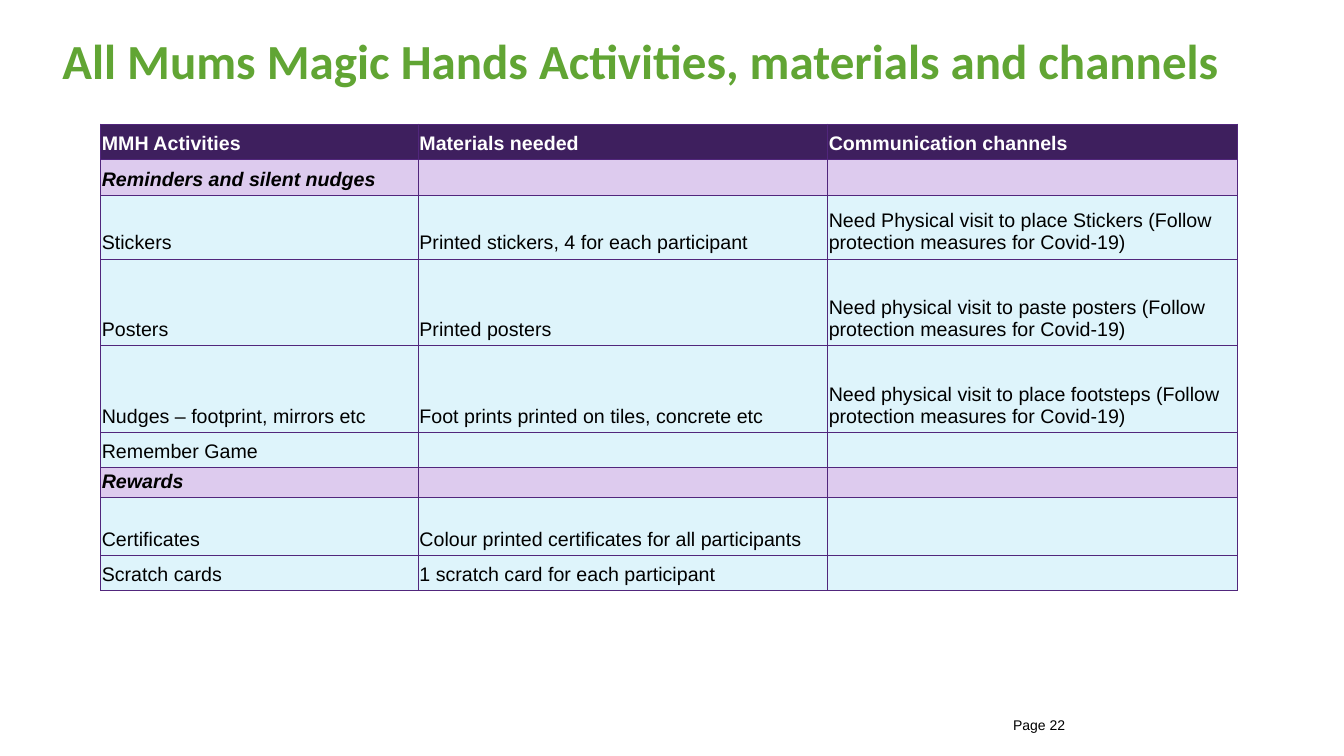
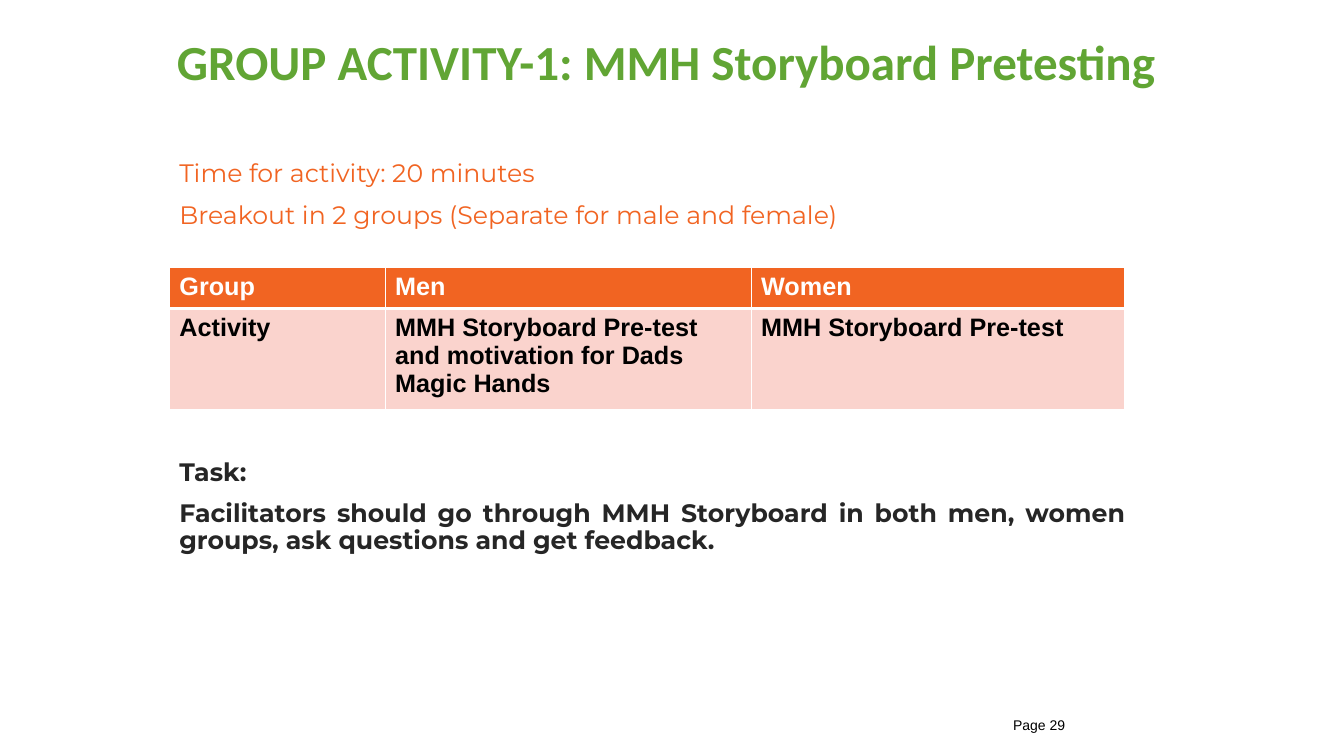
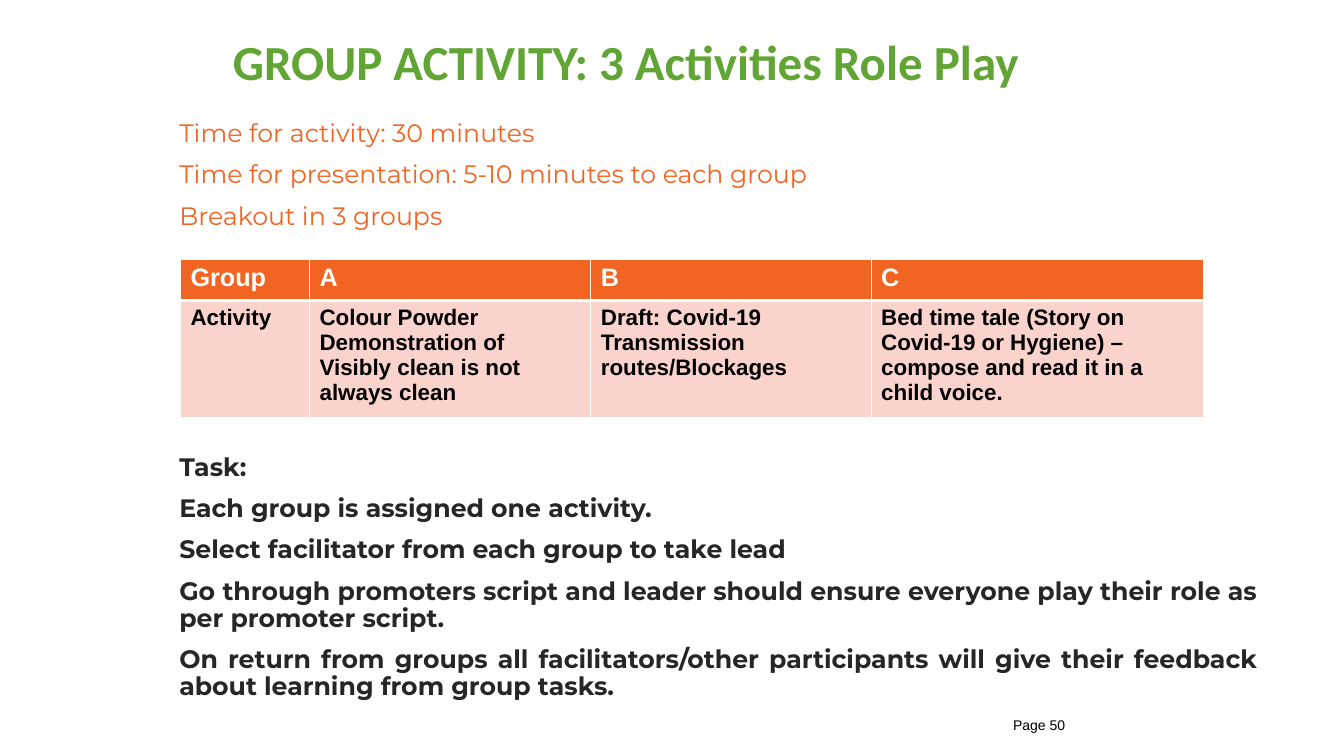
from dataclasses import dataclass
from lxml.etree import SubElement
from pptx import Presentation
from pptx.dml.color import RGBColor as Rgb
from pptx.enum.text import MSO_ANCHOR as Anchor, PP_ALIGN as Align
from pptx.oxml.ns import qn
from pptx.util import Emu, Pt

SCALE = 9144


@dataclass(frozen=True)
class Theme:
    green: str = "61A534"
    orange: str = "F16422"
    pink: str = "FAD3CD"
    plum: str = "3E1F5E"
    lilac: str = "DDCBEE"
    sky: str = "DEF4FB"
    edge: str = "51267C"
    white: str = "FFFFFF"
    black: str = "000000"
    ink: str = "262626"
    head: str = "Calibri"
    body: str = "Montserrat"
    grid: str = "Arial"
    big: int = 35
    text: int = 18
    mid: int = 16
    small: int = 14
    foot: int = 10


THEME = Theme()


@dataclass(frozen=True)
class Box:
    x: int
    y: int
    w: int
    h: int


@dataclass(frozen=True)
class Style:
    font: str
    size: int
    color: str
    bold: bool = False
    italic: bool = False


@dataclass(frozen=True)
class Look:
    style: Style
    fill: str
    line: str
    top: float
    base: float
    side: float
    pads: tuple[int, int, int, int] = (10, 5, 10, 5)
    anchor: Anchor = Anchor.TOP


@dataclass(frozen=True)
class Row:
    high: int
    look: Look
    cells: tuple[str, ...]


@dataclass(frozen=True)
class Group:
    title: str
    span: Box
    page: int
    area: Box
    intro: tuple[str, ...]
    gap: int
    tasks: tuple[str, ...]
    spot: tuple[int, int]
    cols: tuple[int, ...]
    rows: tuple[Row, ...]


TITLE = Style(THEME.head, THEME.big, THEME.green, True)
FOOT = Style(THEME.grid, THEME.foot, THEME.black)
INTRO = Style(THEME.body, THEME.text, THEME.orange)
TASK = Style(THEME.body, THEME.text, THEME.ink, True)


def list_look(color: str, fill: str, bold: bool, italic: bool) -> Look:
    style = Style(THEME.grid, THEME.small, color, bold, italic)
    return Look(style, fill, THEME.edge, 0.75, 0.75, 0.75, (1, 1, 1, 5), Anchor.BOTTOM)


def group_look(size: int, color: str, fill: str, top: float, base: float) -> Look:
    return Look(Style(THEME.grid, size, color, True), fill, THEME.white, top, base, 1)


HEAD = list_look(THEME.white, THEME.plum, True, False)
PART = list_look(THEME.black, THEME.lilac, True, True)
ITEM = list_look(THEME.black, THEME.sky, False, False)
BAR = group_look(THEME.text, THEME.white, THEME.orange, 1, 3)
WIDE = group_look(THEME.text, THEME.black, THEME.pink, 3, 1)
TIGHT = group_look(THEME.mid, THEME.black, THEME.pink, 3, 1)

LIST = (
    Row(35, HEAD, ("MMH Activities", "Materials needed", "Communication channels")),
    Row(36, PART, ("Reminders and silent nudges", "", "")),
    Row(63, ITEM, ("Stickers", "Printed stickers, 4 for each participant",
                   "Need Physical visit to place Stickers (Follow protection measures for Covid-19)")),
    Row(86, ITEM, ("Posters", "Printed posters",
                   "Need physical visit to paste posters (Follow protection measures for Covid-19)")),
    Row(86, ITEM, ("Nudges – footprint, mirrors etc", "Foot prints printed on tiles, concrete etc",
                   "Need physical visit to place footsteps (Follow protection measures for Covid-19)")),
    Row(35, ITEM, ("Remember Game", "", "")),
    Row(30, PART, ("Rewards", "", "")),
    Row(57, ITEM, ("Certificates", "Colour printed certificates for all participants", "")),
    Row(35, ITEM, ("Scratch cards", "1 scratch card for each participant", "")),
)

GROUPS = (
    Group(
        "GROUP ACTIVITY-1: MMH Storyboard Pretesting", Box(127, 28, 1068, 65), 29,
        Box(168, 155, 958, 406),
        ("Time for activity: 20 minutes", "Breakout in 2 groups (Separate for male and female)"),
        164,
        ("Task:",
         "Facilitators should go through MMH Storyboard in both men, women groups, "
         "ask questions and get feedback."),
        (168, 265), (214, 363, 370),
        (Row(41, BAR, ("Group", "Men", "Women")),
         Row(100, WIDE, ("Activity", "MMH Storyboard Pre-test and motivation for Dads Magic Hands",
                         "MMH Storyboard Pre-test"))),
    ),
    Group(
        "GROUP ACTIVITY: 3 Activities Role Play", Box(127, 28, 988, 65), 50,
        Box(168, 115, 1089, 589),
        ("Time for activity: 30 minutes", "Time for presentation: 5-10 minutes to each group",
         "Breakout in 3 groups"),
        160,
        ("Task:", "Each group is assigned one activity.",
         "Select facilitator from each group to take lead",
         "Go through promoters script and leader should ensure everyone play their role "
         "as per promoter script.",
         "On return from groups all facilitators/other participants will give their feedback "
         "about learning from group tasks."),
        (179, 257), (128, 279, 278, 330),
        (Row(41, BAR, ("Group", "A", "B", "C")),
         Row(116, TIGHT, ("Activity",
                          "Colour Powder Demonstration of\nVisibly clean is not always clean",
                          "Draft: Covid-19 Transmission routes/Blockages",
                          "Bed time tale (Story on Covid-19 or Hygiene) – compose and read it "
                          "in a child voice."))),
    ),
)


def px(size: int) -> Emu:
    return Emu(size * SCALE)


def paint(par, style: Style) -> None:
    for run in par.runs:
        font = run.font
        font.name, font.size = style.font, Pt(style.size)
        font.bold, font.italic = style.bold, style.italic
        font.color.rgb = Rgb.from_string(style.color)


def add_text(slide, box: Box, text: str, style: Style,
             align: Align = Align.LEFT, anchor: Anchor = Anchor.TOP):
    shape = slide.shapes.add_textbox(px(box.x), px(box.y), px(box.w), px(box.h))
    frame = shape.text_frame
    frame.word_wrap, frame.vertical_anchor = True, anchor
    frame.text = text
    for par in frame.paragraphs:
        par.alignment = align
        paint(par, style)
    return frame


def add_edges(cell, look: Look) -> None:
    props = cell._tc.get_or_add_tcPr()
    sides = {"lnL": look.side, "lnR": look.side, "lnT": look.top, "lnB": look.base}
    for tag, width in sides.items():
        line = SubElement(props, qn(f"a:{tag}"), w=str(Pt(width)))
        fill = SubElement(line, qn("a:solidFill"))
        SubElement(fill, qn("a:srgbClr"), val=look.line)


def fill_cell(cell, text: str, look: Look) -> None:
    add_edges(cell, look)
    cell.fill.solid()
    cell.fill.fore_color.rgb = Rgb.from_string(look.fill)
    cell.margin_left, cell.margin_top, cell.margin_right, cell.margin_bottom = map(px, look.pads)
    cell.vertical_anchor = look.anchor
    cell.text_frame.text = text
    for par in cell.text_frame.paragraphs:
        paint(par, look.style)
        if not text:
            par._p.get_or_add_endParaRPr().set("sz", str(look.style.size * 100))


def add_grid(slide, spot: tuple[int, int], cols: tuple[int, ...], rows: tuple[Row, ...]) -> None:
    wide, high = sum(cols), sum(row.high for row in rows)
    table = slide.shapes.add_table(
        len(rows), len(cols), px(spot[0]), px(spot[1]), px(wide), px(high)).table
    table.horz_banding = False
    for col, width in zip(table.columns, cols):
        col.width = px(width)
    for line, row in zip(table.rows, rows):
        line.height = px(row.high)
        for cell, text in zip(line.cells, row.cells):
            fill_cell(cell, text, row.look)


def add_page(deck, title: str, span: Box, page: int, align: Align):
    slide = deck.slides.add_slide(deck.slide_layouts[6])
    add_text(slide, Box(995, 706, 179, 18), f"Page {page}", FOOT)
    add_text(slide, span, title, TITLE, align, Anchor.MIDDLE)
    return slide


def add_group(deck, group: Group) -> None:
    slide = add_page(deck, group.title, group.span, group.page, Align.CENTER)
    text = "\n".join(group.intro + group.tasks)
    frame = add_text(slide, group.area, text, INTRO)
    first = len(group.intro)
    for i, par in enumerate(frame.paragraphs):
        par.line_spacing = 0.9
        if i:
            par.space_before = Pt(group.gap if i == first else 10)
        if i >= first:
            par.alignment = Align.JUSTIFY
            paint(par, TASK)
    add_grid(slide, group.spot, group.cols, group.rows)


def main() -> None:
    deck = Presentation()
    deck.slide_width, deck.slide_height = px(1333), px(750)
    slide = add_page(deck, "All Mums Magic Hands Activities, materials and channels",
                     Box(52, 27, 1252, 64), 22, Align.LEFT)
    add_grid(slide, (100, 123), (315, 406, 406), LIST)
    for group in GROUPS:
        add_group(deck, group)
    deck.save("out.pptx")


if __name__ == "__main__":
    main()
